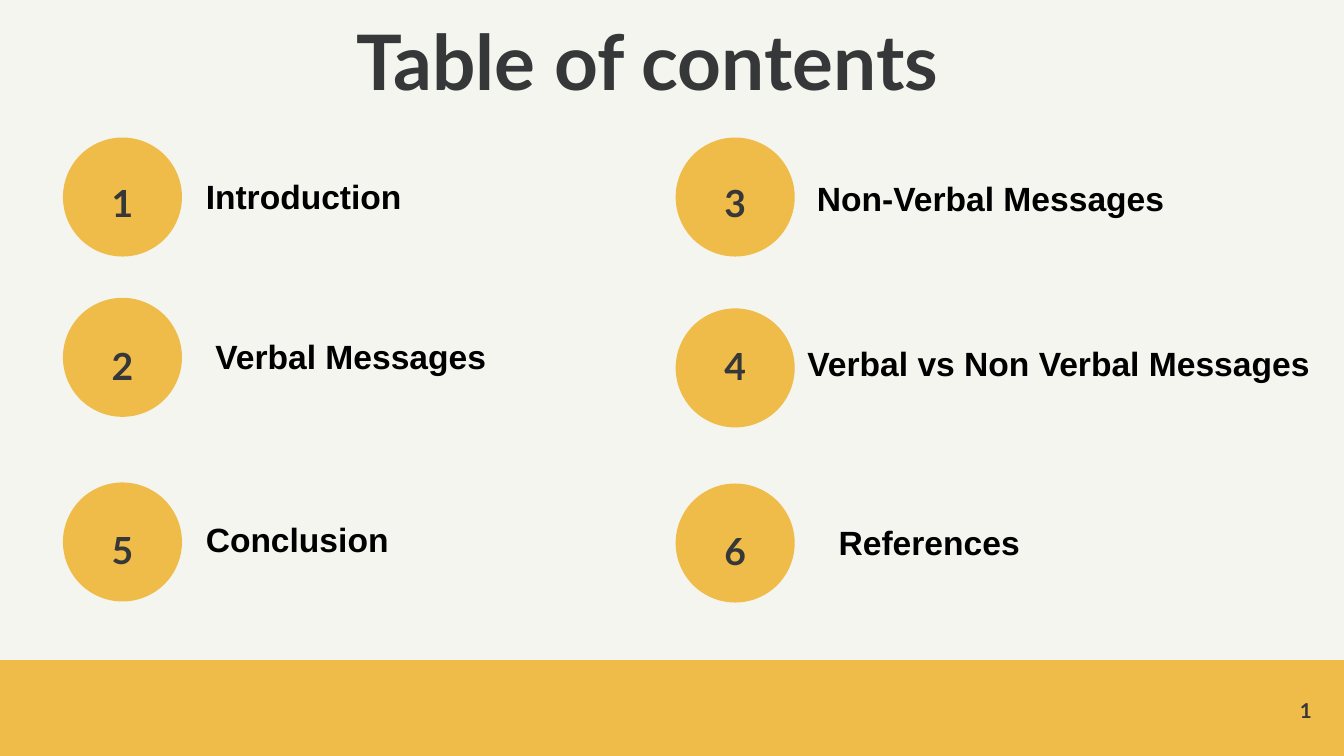
"""Build a table of contents slide with six numbered entries."""
from pptx import Presentation
from pptx.dml.color import RGBColor
from pptx.enum.shapes import MSO_SHAPE
from pptx.enum.text import MSO_ANCHOR, PP_ALIGN
from pptx.util import Cm, Pt

OVAL, RECTANGLE = MSO_SHAPE.OVAL, MSO_SHAPE.RECTANGLE
TOP, MIDDLE = MSO_ANCHOR.TOP, MSO_ANCHOR.MIDDLE
LEFT, CENTER, RIGHT = PP_ALIGN.LEFT, PP_ALIGN.CENTER, PP_ALIGN.RIGHT
COLORS = {"background": "F5F5EF", "accent": "EFBC49", "dark": "363739", "label": "000000"}

presentation = Presentation()
presentation.slide_width, presentation.slide_height = Cm(25.4), Cm(14.29)
slide = presentation.slides.add_slide(presentation.slide_layouts[5])
slide.background.fill.solid()
slide.background.fill.fore_color.rgb = RGBColor.from_string(COLORS["background"])


def add_filled(kind, left, top, width, height):
    shape = slide.shapes.add_shape(kind, Cm(left), Cm(top), Cm(width), Cm(height))
    shape.shadow.inherit = False
    shape.fill.solid()
    shape.fill.fore_color.rgb = RGBColor.from_string(COLORS["accent"])
    shape.line.fill.background()


def write(text, left, top, width, height, size, shape=None, font="Lato", color="dark",
          align=LEFT, anchor=TOP, spacing=1.0):
    shape = shape or slide.shapes.add_textbox(0, 0, 0, 0)
    shape.left, shape.top, shape.width, shape.height = Cm(left), Cm(top), Cm(width), Cm(height)
    frame = shape.text_frame
    frame.word_wrap = True
    frame.vertical_anchor = anchor
    frame.margin_left = frame.margin_right = frame.margin_top = frame.margin_bottom = 0
    paragraph = frame.paragraphs[0]
    paragraph.alignment = align
    paragraph.line_spacing = spacing
    run = paragraph.add_run()
    run.text = text
    run.font.name = font
    run.font.size = Pt(size)
    run.font.bold = True
    run.font.color.rgb = RGBColor.from_string(COLORS[color])


write("Table of contents", 6.73, 0.46, 11.94, 2, 41, shape=slide.shapes.title, spacing=0.9)

CIRCLE = 2.25
NUMBER = 1.07
COLUMNS = {"left": 1.19, "right": 12.77}
NUMBER_INSET = (CIRCLE - NUMBER) / 2
entries = [
    ("1", "Introduction", "left", 2.6, 3.2, 3.89, 3.33),
    ("2", "Verbal Messages", "left", 5.63, 6.27, 4.07, 6.35),
    ("3", "Non-Verbal Messages", "right", 2.6, 3.2, 15.44, 3.36),
    ("4", "Verbal vs Non Verbal Messages", "right", 5.83, 6.27, 15.26, 6.48),
    ("5", "Conclusion", "left", 9.12, 9.76, 3.89, 9.81),
    ("6", "References", "right", 9.14, 9.78, 15.85, 9.86),
]
for number, label, column, circle_top, number_top, label_left, label_top in entries:
    circle_left = COLUMNS[column]
    add_filled(OVAL, circle_left, circle_top, CIRCLE, CIRCLE)
    write(number, circle_left + NUMBER_INSET, number_top, NUMBER, NUMBER, 20,
          align=CENTER, spacing=1.25)
    label_width = 8.5 if column == "left" else 25.4 - label_left
    write(label, label_left, label_top, label_width, 0.76, 18, font="Arial", color="label")

add_filled(RECTANGLE, 0, 12.48, 25.4, 1.81)
write("1", 23.27, 13.18, 1.52, 0.51, 11, align=RIGHT, anchor=MIDDLE)

presentation.save("out.pptx")
